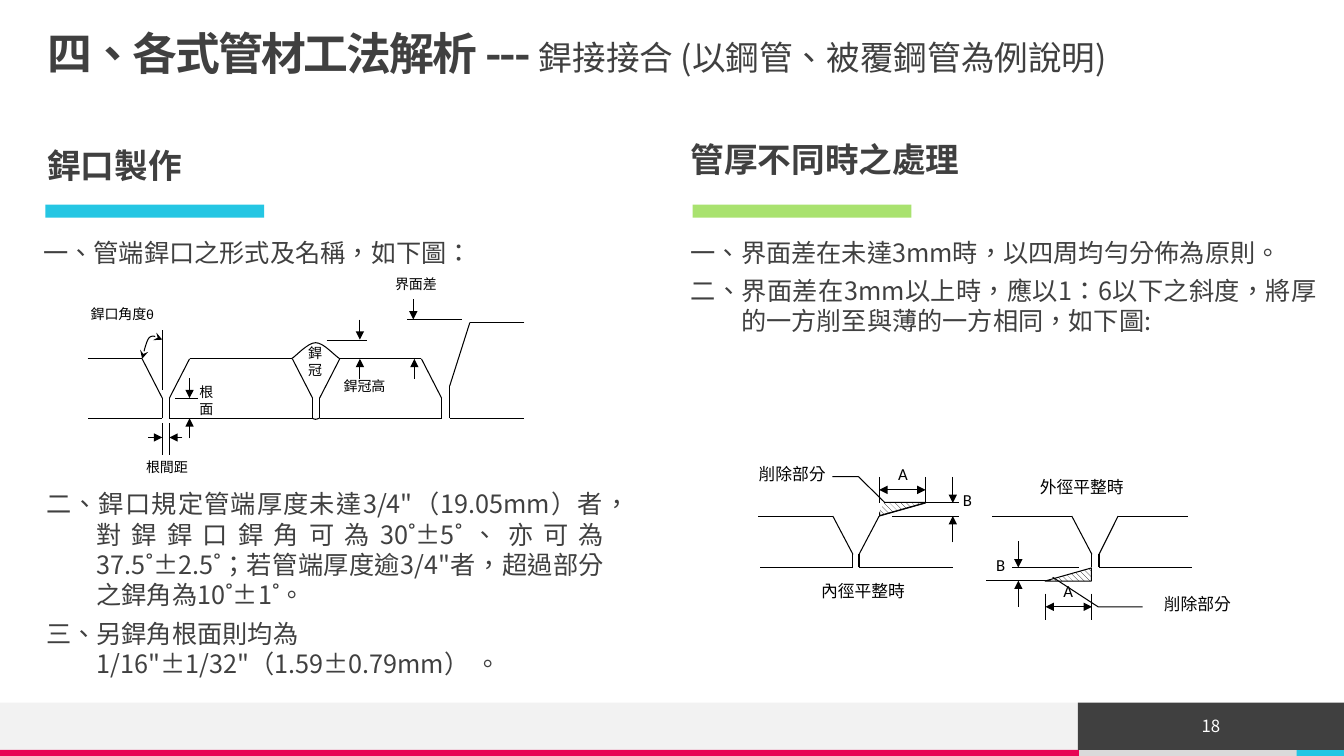
import pptx
import pptx.util
import pptx.dml.color
import pptx.enum.dml
import pptx.enum.shapes
import pptx.enum.text
import pptx.oxml
import pptx.oxml.ns

Inches, Pt = pptx.util.Inches, pptx.util.Pt
SHAPE = pptx.enum.shapes.MSO_SHAPE
ALIGN = pptx.enum.text.PP_ALIGN
ANCHOR = pptx.enum.text.MSO_ANCHOR
LEFT, CENTER, RIGHT, JUSTIFY = ALIGN.LEFT, ALIGN.CENTER, ALIGN.RIGHT, ALIGN.JUSTIFY
qn = pptx.oxml.ns.qn
rgb = pptx.dml.color.RGBColor.from_string
CJK = "Noto Sans CJK TC"
GREY = "404040"

prs = pptx.Presentation()
prs.slide_width, prs.slide_height = Inches(13.33), Inches(7.5)
s = prs.slides.add_slide(prs.slide_layouts[6])


def write(sp, texts, size, color=GREY, font=CJK, bold=False, align=LEFT,
          inset=(0, 0), anchor=ANCHOR.TOP, before=0, spacing=None, hanging=False):
    """Fill a shape with one paragraph per text; inset is (sides, top and bottom)."""
    tf = sp.text_frame
    tf.word_wrap = True
    tf.vertical_anchor = anchor
    tf.margin_left = tf.margin_right = Inches(inset[0])
    tf.margin_top = tf.margin_bottom = Inches(inset[1])
    for i, text in enumerate(texts):
        p = tf.add_paragraph() if i else tf.paragraphs[0]
        p.add_run().text = text
        p.alignment = align
        p.space_before = Pt(before)
        p.line_spacing = spacing
        p.font.size, p.font.bold, p.font.name = Pt(size), bold, font
        p.font.color.rgb = rgb(color)
        pPr = p._p.get_or_add_pPr()
        defaults = pPr.find(qn("a:defRPr"))
        defaults.set("lang", "zh-TW")
        latin = defaults.find(qn("a:latin"))
        latin.addnext(latin.makeelement(qn("a:ea"), {"typeface": CJK}))
        if hanging:
            pPr.set("marL", str(Inches(0.5)))
            pPr.set("indent", str(Inches(-0.5)))


def line(*points, heads=()):
    """Join the points with straight black lines, with arrowheads at the named ends."""
    for (x1, y1), (x2, y2) in zip(points, points[1:]):
        c = s.shapes.add_connector(pptx.enum.shapes.MSO_CONNECTOR.STRAIGHT,
                                   Inches(x1), Inches(y1), Inches(x2), Inches(y2))
        c.line.width = Pt(0.75)
        c.line.color.rgb = rgb("000000")
        ln = c.line._get_or_add_ln()
        for head in heads:
            ln.append(ln.makeelement(qn(f"a:{head}"), {"type": "triangle"}))
        c._element.spPr.append(c._element.makeelement(qn("a:effectLst"), {}))


# Footer and heading bars
for x, y, w, h, color in [
    (10.7, 7.44, 2.17, 0.06, "DADADA"),
    (0, 6.97, 10.7, 0.47, "F2F2F2"),
    (0, 7.44, 10.7, 0.06, "E80554"),
    (12.86, 7.44, 0.47, 0.06, "25C6E3"),
    (0.45, 2.03, 2.17, 0.13, "25C6E3"),
    (6.87, 2.03, 2.17, 0.13, "A9E26F"),
    (10.69, 6.97, 2.64, 0.47, GREY),
]:
    bar = s.shapes.add_shape(SHAPE.RECTANGLE, Inches(x), Inches(y), Inches(w), Inches(h))
    bar.shadow.inherit = False
    bar.fill.solid()
    bar.fill.fore_color.rgb = rgb(color)
    bar.line.fill.background()
write(bar, ["18"], 12, "FFFFFF", align=CENTER, anchor=ANCHOR.MIDDLE)

# Title
title = s.shapes.add_textbox(Inches(0.47), Inches(0.27), Inches(12.4), Inches(0.58))
write(title, ["四、各式管材工法解析 --- "], 32, bold=True, anchor=ANCHOR.MIDDLE, spacing=0.9)
p = title.text_frame.paragraphs[0]
p.runs[0]._r.get_or_add_rPr().set("spc", "-150")
r = p.add_run()
r.text = "銲接接合 (以鋼管、被覆鋼管為例說明)"
r.font.size, r.font.bold = Pt(24), False

# Headings, body text and figure labels
heading = dict(size=24, bold=True, before=10, spacing=0.9)
body = dict(size=18, align=JUSTIFY, before=6, hanging=True)
note = dict(size=10, color="000000", font="Calibri", inset=(0.1, 0.05))
label = dict(size=12, color="000000", font="Calibri")
for x, y, w, h, texts, style in [
    (0.47, 1.48, 5.98, 0.39, ["銲口製作"], heading),
    (6.85, 1.42, 5.98, 0.39, ["管厚不同時之處理"], heading),
    (0.43, 2.35, 5.59, 0.34, ["一、管端銲口之形式及名稱，如下圖："], body),
    (6.85, 2.35, 6.21, 1.13, [
        "一、界面差在未達3mm時，以四周均勻分佈為原則。",
        "二、界面差在3mm以上時，應以1：6以下之斜度，將厚的一方削至與薄的一方相同，如下圖:",
    ], body),
    (0.36, 4.79, 5.73, 2, [
        "二、銲口規定管端厚度未達3/4\"（19.05mm）者，對銲銲口銲角可為30˚±5˚、亦可為"
        "37.5˚±2.5˚；若管端厚度逾3/4\"者，超過部分之銲角為10˚±1˚。",
        "三、另銲角根面則均為1/16\"±1/32\"（1.59±0.79mm） 。",
    ], body | dict(inset=(0.1, 0.05), anchor=ANCHOR.MIDDLE)),
    (1.35, 4.5, 0.72, 0.59, ["根間距"], note),
    (1.88, 3.76, 0.41, 0.59, ["根面"], note),
    (3.31, 3.7, 0.67, 0.59, ["銲冠高"], note),
    (3.82, 2.68, 0.7, 0.59, ["界面差"], note),
    (2.89, 3.37, 0.47, 0.59, ["銲冠"], note | dict(align=CENTER)),
    (0.8, 2.98, 1.02, 0.59, ["銲口角度θ"], note),
    (8.79, 4.6, 0.33, 0.26, ["A"], label | dict(align=CENTER)),
    (9.31, 4.86, 0.33, 0.26, ["B"], label | dict(align=RIGHT)),
    (8, 5.76, 1.12, 0.26, ["內徑平整時"], label | dict(align=CENTER)),
    (10.17, 4.73, 1.12, 0.26, ["外徑平整時"], label | dict(align=CENTER)),
    (10.43, 5.76, 0.33, 0.26, ["A"], label | dict(align=CENTER)),
    (9.64, 5.5, 0.33, 0.26, ["B"], label | dict(align=RIGHT)),
]:
    box = s.shapes.add_textbox(Inches(x), Inches(y), Inches(w), Inches(h))
    write(box, texts, **style)
    if texts[-1].startswith("三"):
        box.text_frame.paragraphs[-1].alignment = LEFT

# Left figure: bevelled pipe ends, each drawn from its root edge
for root, way in [(1.61, -1), (1.68, 1), (3.1, -1), (3.17, 1), (4.38, -1)]:
    far = root + way * 0.74
    line((far, 3.56), (root + way * 0.2, 3.56), (root, 3.95), (root, 4.15), (far, 4.15))
line((5.2, 3.2), (4.66, 3.2), (4.46, 3.83), (4.46, 4.15), (5.2, 4.15))

# Left figure: reference lines and dimension arrows
for x1, y1, x2, y2 in [(1.61, 3.87, 1.61, 3.27), (1.61, 4.2, 1.61, 4.51),
                       (1.68, 4.2, 1.68, 4.51), (1.74, 3.95, 1.96, 3.95),
                       (3.24, 3.38, 3.64, 3.38), (4.04, 3.17, 4.58, 3.17)]:
    line((x1, y1), (x2, y2))
for x, tip, way in [(1.88, 3.95, 1), (1.88, 4.15, -1), (3.57, 3.37, 1),
                    (3.57, 3.56, -1), (4.1, 3.17, 1), (4.11, 3.56, -1)]:
    line((x, tip - way * 0.2), (x, tip), heads=["tailEnd"])
line((1.47, 4.34), (1.61, 4.34), heads=["tailEnd"])
line((1.81, 4.34), (1.68, 4.34), heads=["tailEnd"])

# Left figure: weld cap, weld root and angle arc as chains of Bezier curves
cap = [(2.89, 3.56), (2.93, 3.54), (3.05, 3.4), (3.13, 3.4), (3.21, 3.4), (3.32, 3.53), (3.37, 3.56)]
bead = [(3.1, 4.15), (3.1, 4.15), (3.12, 4.16), (3.13, 4.16), (3.14, 4.16), (3.16, 4.15), (3.17, 4.15)]
angle = [(1.41, 3.56), (1.42, 3.53), (1.45, 3.38), (1.48, 3.35), (1.52, 3.31), (1.58, 3.36), (1.61, 3.37)]
for curve in (cap, bead, angle):
    dots = [[Inches(v) for v in curve[0]]]
    for a, b, c, d in (curve[:4], curve[3:]):
        for t in [i / 8 for i in range(1, 9)]:
            dots.append([Inches((1 - t) ** 3 * a[k] + 3 * t * (1 - t) ** 2 * b[k]
                                + 3 * t ** 2 * (1 - t) * c[k] + t ** 3 * d[k]) for k in (0, 1)])
    outline = s.shapes.build_freeform(*dots[0])
    outline.add_line_segments(dots[1:], close=False)
    sp = outline.convert_to_shape()
    sp.shadow.inherit = False
    sp.fill.background()
    sp.line.width = Pt(0.75)
    sp.line.color.rgb = rgb("000000")
    if curve is angle:
        ln = sp.line._get_or_add_ln()
        for end in ("headEnd", "tailEnd"):
            ln.append(ln.makeelement(qn(f"a:{end}"), {"type": "stealth"}))

# Right figure: joints between pipes of unequal thickness
line((7.52, 5.12), (8.26, 5.12), (8.46, 5.5), (8.46, 5.63), (7.54, 5.63))
line((9.45, 5.63), (8.52, 5.63), (8.52, 5.5), (8.72, 5.12), (9.18, 4.99), (9.51, 4.99))
line((9.84, 5.12), (10.63, 5.12), (10.83, 5.5), (10.83, 5.63))
line((11.78, 5.12), (11.09, 5.12), (10.9, 5.5), (10.9, 5.63), (11.82, 5.63))
line((10.51, 5.76), (9.78, 5.76))
line((8.85, 5.12), (9.51, 5.12))
line((10.7, 5.63), (10.04, 5.63))

# Right figure: wedges to cut away, with a white one trimming the first
for x, y, w, h, turn, hatched, flipped in [
    (8.89, 4.82, 0.13, 0.46, 90, True, False),
    (8.67, 4.99, 0.15, 0.08, 87, False, False),
    (10.53, 5.47, 0.13, 0.46, 90, True, True),
]:
    wedge = s.shapes.add_shape(SHAPE.RIGHT_TRIANGLE, Inches(x), Inches(y), Inches(w), Inches(h))
    wedge.shadow.inherit = False
    wedge.rotation = turn
    if hatched:
        wedge.fill.patterned()
        wedge.fill.pattern = pptx.enum.dml.MSO_PATTERN.WIDE_DOWNWARD_DIAGONAL
        wedge.fill.fore_color.rgb = rgb("000000")
        wedge.fill.back_color.rgb = rgb("FFFFFF")
        wedge.line.width = Pt(0.75)
        wedge.line.color.rgb = rgb("000000")
    else:
        wedge.fill.solid()
        wedge.fill.fore_color.rgb = rgb("FFFFFF")
        wedge.line.fill.background()
    if flipped:
        wedge._element.spPr.xfrm.set("flipH", "1")
        wedge._element.spPr.xfrm.set("flipV", "1")

# Right figure: dimensions A (across) and B (up and down)
for x, y in [(8.72, 4.73), (10.37, 5.89)]:
    for edge in (x, x + 0.46):
        line((edge, y), (edge, y + 0.26))
    line((x, y + 0.13), (x + 0.46, y + 0.13), heads=["headEnd", "tailEnd"])
for x, upper, lower in [(9.45, 4.99, 5.12), (10.1, 5.63, 5.76)]:
    line((x, upper - 0.26), (x, upper), heads=["tailEnd"])
    line((x, lower + 0.26), (x, lower), heads=["tailEnd"])

# Right figure: callouts for the removed part
for x, y, w, h, flipped, bends in [
    (7.47, 4.6, 0.72, 0.39, False, (0.33, 1.09, 0.33, 1.45, 1, 1.82)),
    (11.42, 5.89, 0.79, 0.26, True, (0.5, 1.11, 0.5, 1.67, -0.63, 2.24)),
]:
    callout = s.shapes.add_shape(SHAPE.LINE_CALLOUT_2_NO_BORDER,
                                 Inches(x), Inches(y), Inches(w), Inches(h))
    callout.shadow.inherit = False
    callout.fill.background()
    callout.line.width = Pt(0.75)
    callout.line.color.rgb = rgb("000000")
    for i, bend in enumerate(bends):
        callout.adjustments[i] = bend
    if flipped:
        callout._element.spPr.xfrm.set("flipH", "1")
    write(callout, ["削除部分"], align=RIGHT, **label)

prs.save("out.pptx")
